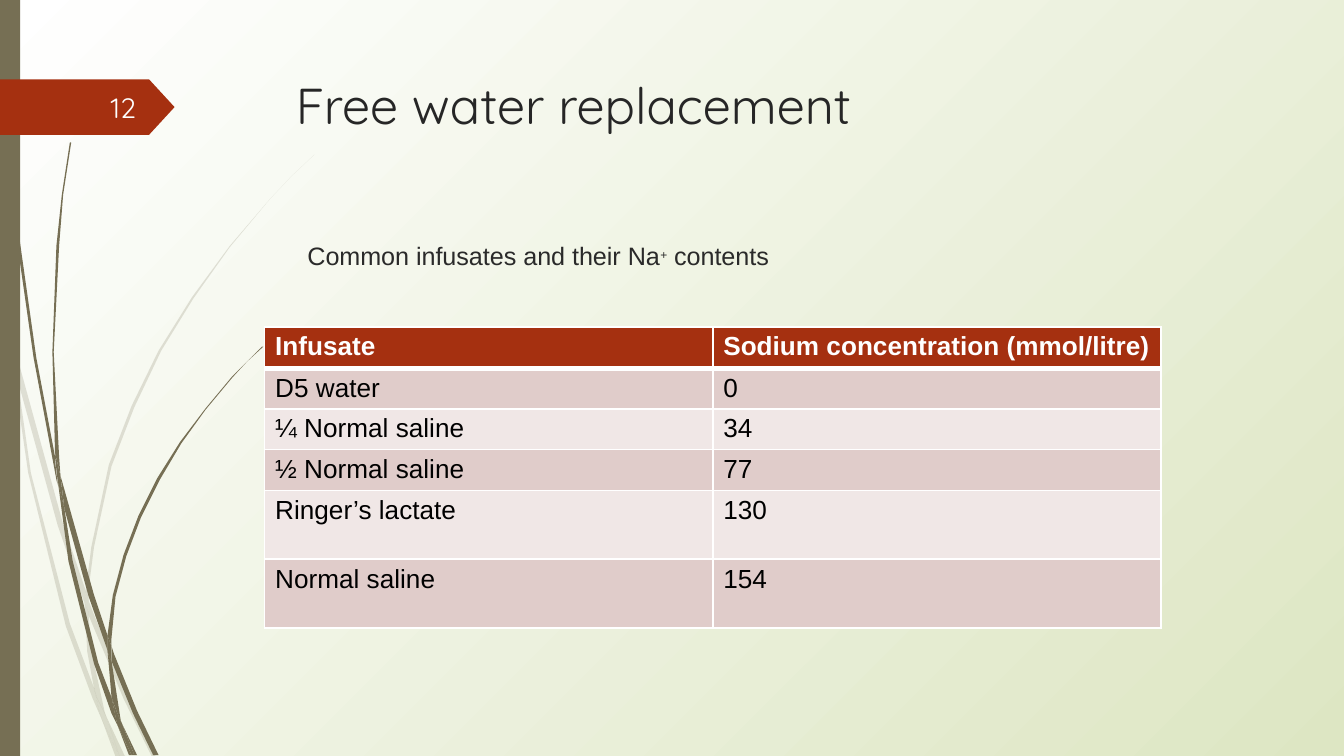
"""Build the slide on free water replacement with its infusate table."""
from dataclasses import dataclass

from lxml.etree import SubElement
from pptx import Presentation
from pptx.dml.color import RGBColor as Rgb
from pptx.enum.shapes import MSO_SHAPE as Preset
from pptx.enum.text import MSO_ANCHOR as Anchor, MSO_AUTO_SIZE as AutoSize, PP_ALIGN as Align
from pptx.oxml.ns import qn
from pptx.util import Cm, Pt


@dataclass(frozen=True)
class Theme:
    white: str = "FFFFFF"
    meadow: str = "DDE6C3"
    stem: str = "766F54"
    accent: str = "A53010"
    bands: tuple = ("F0E7E6", "E0CCCA")
    title: tuple = (("name", "Quicksand"), ("size", Pt(27)), ("color", "262626"))
    body: tuple = (("name", "Arial"), ("size", Pt(13.5)), ("color", "2A2A2A"))
    number: tuple = (("name", "Quicksand"), ("size", Pt(15)), ("color", "FEFFFF"))
    head: tuple = (("name", "Arial"), ("size", Pt(14)), ("bold", True), ("color", "FFFFFF"))
    cell: tuple = (("name", "Arial"), ("size", Pt(14)), ("bold", False), ("color", "000000"))


THEME = Theme()
GRID = Cm(2.54) / 100

PALE_STEMS = [
    [(8, 263), (6, 241), (0, 211), (0, 224), (8, 258)],
    [(43, 391), (63, 449), (64, 440), (47, 390), (11, 259), (13, 282)],
    [(69, 455), (66, 447), (66, 458), (92, 520), (113, 563), (116, 563), (95, 519)],
    [(89, 563), (93, 563), (79, 533)],
    [(70, 512), (52, 464), (23, 352), (13, 282), (8, 263), (21, 352), (49, 466), (69, 520),
     (76, 536), (74, 530)],
    [(63, 449), (65, 485), (70, 512), (72, 519), (79, 533), (78, 530), (68, 484), (66, 458),
     (66, 456)],
    [(66, 438), (70, 407), (83, 347), (100, 303), (120, 261), (144, 222), (171, 184),
     (201, 148), (217, 131), (234, 115), (217, 131), (201, 148), (171, 183), (143, 221),
     (118, 261), (98, 302), (81, 346), (68, 407), (64, 438), (64, 440), (66, 447)],
    [(76, 536), (86, 563), (89, 563)],
    [(66, 456), (66, 458), (66, 447), (64, 440), (63, 449)],
    [(72, 519), (70, 512), (74, 530), (76, 536), (89, 563), (79, 533)],
]

DARK_STEMS = [
    [(5, 82), (12, 175), (25, 266), (42, 357), (43, 361), (41, 343), (41, 340), (27, 266),
     (14, 174), (6, 82), (3, 36), (3, 0), (2, 0), (3, 36)],
    [(66, 444), (80, 484), (80, 475), (80, 473), (70, 443), (45, 354), (48, 379)],
    [(85, 487), (83, 481), (83, 492), (99, 531), (114, 562), (118, 562), (102, 529)],
    [(83, 519), (73, 493), (54, 417), (48, 379), (43, 358), (51, 418), (70, 494), (83, 531),
     (88, 541), (87, 538)],
    [(45, 354), (44, 340), (40, 262), (44, 183), (47, 145), (53, 106), (52, 106), (46, 145),
     (42, 183), (39, 262), (41, 337)],
    [(100, 562), (102, 562), (91, 539)],
    [(43, 358), (48, 379), (45, 354), (41, 337), (41, 340)],
    [(83, 475), (86, 444), (94, 414), (105, 385), (119, 357), (135, 330), (153, 305),
     (173, 281), (184, 269), (196, 258), (195, 258), (184, 269), (173, 280), (153, 304),
     (134, 329), (117, 356), (103, 384), (92, 413), (84, 443), (80, 473), (83, 481)],
    [(88, 541), (96, 562), (98, 562)],
    [(80, 484), (83, 519), (87, 530), (91, 539), (90, 537), (83, 492), (81, 488)],
    [(80, 484), (81, 488), (83, 492), (83, 481), (80, 473), (80, 475)],
    [(87, 530), (83, 519), (87, 538), (88, 541), (98, 562), (100, 562), (91, 539)],
]

INFUSATES = [
    ("Infusate", "Sodium concentration (mmol/litre)"),
    ("D5 water", "0"),
    ("¼ Normal saline", "34"),
    ("½ Normal saline", "77"),
    ("Ringer’s lactate", "130"),
    ("Normal saline", "154"),
]
ROW_HEIGHTS = [0.78, 0.77, 0.77, 0.77, 1.3, 1.3]


def set_values(target, values):
    """Set every named value as an attribute of the target."""
    for name, value in dict(values).items():
        setattr(target, name, value)


def write(paragraph, text, style):
    """Add a run in the given text style and return it."""
    run = paragraph.add_run()
    run.text = text
    values = dict(style)
    run.font.color.rgb = Rgb.from_string(values.pop("color"))
    set_values(run.font, values)
    return run


def paint(shape, color, opacity=None):
    """Give a shape a flat fill without outline or shadow."""
    shape.shadow.inherit = False
    shape.line.fill.background()
    shape.fill.solid()
    shape.fill.fore_color.rgb = Rgb.from_string(color)
    if opacity:
        tone = shape.element.spPr.find(".//" + qn("a:srgbClr"))
        SubElement(tone, qn("a:alpha"), val=str(opacity * 1000))


def paint_background(slide):
    """Spread the gradient from the top left corner of the slide."""
    fill = slide.background.fill
    fill.gradient()
    for stop, color in zip(fill.gradient_stops, (THEME.white, THEME.meadow)):
        stop.color.rgb = Rgb.from_string(color)
    gradient = slide.element.find(".//" + qn("a:gradFill"))
    gradient.remove(gradient.find(qn("a:lin")))
    spread = SubElement(gradient, qn("a:path"), path="circle")
    SubElement(spread, qn("a:fillToRect"), r="100000", b="100000")


def add_stems(slide, outlines, opacity=None):
    """Draw one group of grass stems."""
    group = slide.shapes.add_group_shape()
    for start, *rest in outlines:
        builder = group.shapes.build_freeform(*start, scale=GRID)
        builder.add_line_segments(rest, close=True)
        paint(builder.convert_to_shape(), THEME.stem, opacity)


def add_block(slide, preset, frame, color):
    """Add a flat preset shape."""
    block = slide.shapes.add_shape(preset, *map(Cm, frame))
    paint(block, color)
    return block


def set_text_area(shape, frame, anchor=Anchor.TOP):
    """Place a text shape, bring it to the front and return its first paragraph."""
    set_values(shape, zip(("left", "top", "width", "height"), map(Cm, frame)))
    set_values(shape.text_frame, {
        "word_wrap": True, "auto_size": AutoSize.NONE, "vertical_anchor": anchor,
        "margin_left": Cm(0.18), "margin_right": Cm(0.18),
        "margin_top": Cm(0.1), "margin_bottom": Cm(0.1)})
    shape.element.getparent().append(shape.element)
    return shape.text_frame.paragraphs[0]


def add_title(slide):
    """Fill the title placeholder."""
    heading = set_text_area(slide.shapes.title, (5.41, 1.3, 18.57, 2.67))
    heading.alignment = Align.LEFT
    write(heading, "Free water replacement", THEME.title)


def add_caption(slide):
    """Fill the body placeholder with the line above the table."""
    caption = set_text_area(slide.placeholders[1], (5.38, 4.45, 18.57, 7.87))
    properties = caption._p.get_or_add_pPr()
    properties.set("marL", str(Cm(0.71)))
    properties.set("indent", str(Cm(-0.46)))
    SubElement(properties, qn("a:buNone"))
    caption.space_before = Pt(0)
    write(caption, "Common infusates and their Na", THEME.body)
    charge = write(caption, "+", {**dict(THEME.body), "size": Pt(11)})
    charge._r.get_or_add_rPr().set("baseline", "30000")
    write(caption, " contents", THEME.body)


def add_number(slide):
    """Add the slide number over the arrow."""
    frame = (1.12, 1.65, 1.63, 0.76)
    number = set_text_area(slide.shapes.add_textbox(*map(Cm, frame)), frame, Anchor.MIDDLE)
    number.alignment = Align.RIGHT
    write(number, "12", THEME.number)


def add_borders(cell, widths):
    """Draw white cell borders with the width in points for each side."""
    for side, width in widths.items():
        border = SubElement(cell._tc.get_or_add_tcPr(), qn("a:ln" + side), w=str(Pt(width)))
        SubElement(SubElement(border, qn("a:solidFill")), qn("a:srgbClr"), val=THEME.white)


def add_infusate_table(slide):
    """Add the table of infusates and their sodium content."""
    frame = map(Cm, (5, 6.18, 16.94, sum(ROW_HEIGHTS)))
    table = slide.shapes.add_table(len(INFUSATES), 2, *frame).table
    for index, (entries, height) in enumerate(zip(INFUSATES, ROW_HEIGHTS)):
        table.rows[index].height = Cm(height)
        for column, entry in enumerate(entries):
            cell = table.cell(index, column)
            set_values(cell, {"margin_left": Cm(0.2), "margin_right": Cm(0.2),
                              "margin_top": Cm(0.1), "margin_bottom": Cm(0.1)})
            add_borders(cell, {"L": 1, "R": 1, "T": 3 if index == 1 else 1,
                               "B": 3 if index == 0 else 1})
            cell.fill.solid()
            color = THEME.bands[index % 2] if index else THEME.accent
            cell.fill.fore_color.rgb = Rgb.from_string(color)
            write(cell.text_frame.paragraphs[0], entry, THEME.cell if index else THEME.head)


def main():
    """Build and save the slide."""
    deck = Presentation()
    set_values(deck, {"slide_width": Cm(25.4), "slide_height": Cm(14.29)})
    slide = deck.slides.add_slide(deck.slide_layouts[1])
    paint_background(slide)
    add_stems(slide, PALE_STEMS, opacity=20)
    add_stems(slide, DARK_STEMS)
    add_block(slide, Preset.RECTANGLE, (0, 0, 0.38, 14.29), THEME.stem)
    arrow = add_block(slide, Preset.PENTAGON, (0, 1.5, 3.3, 1.05), THEME.accent)
    arrow.adjustments[0] = 0.46
    add_title(slide)
    add_caption(slide)
    add_number(slide)
    add_infusate_table(slide)
    deck.save("out.pptx")


if __name__ == "__main__":
    main()
